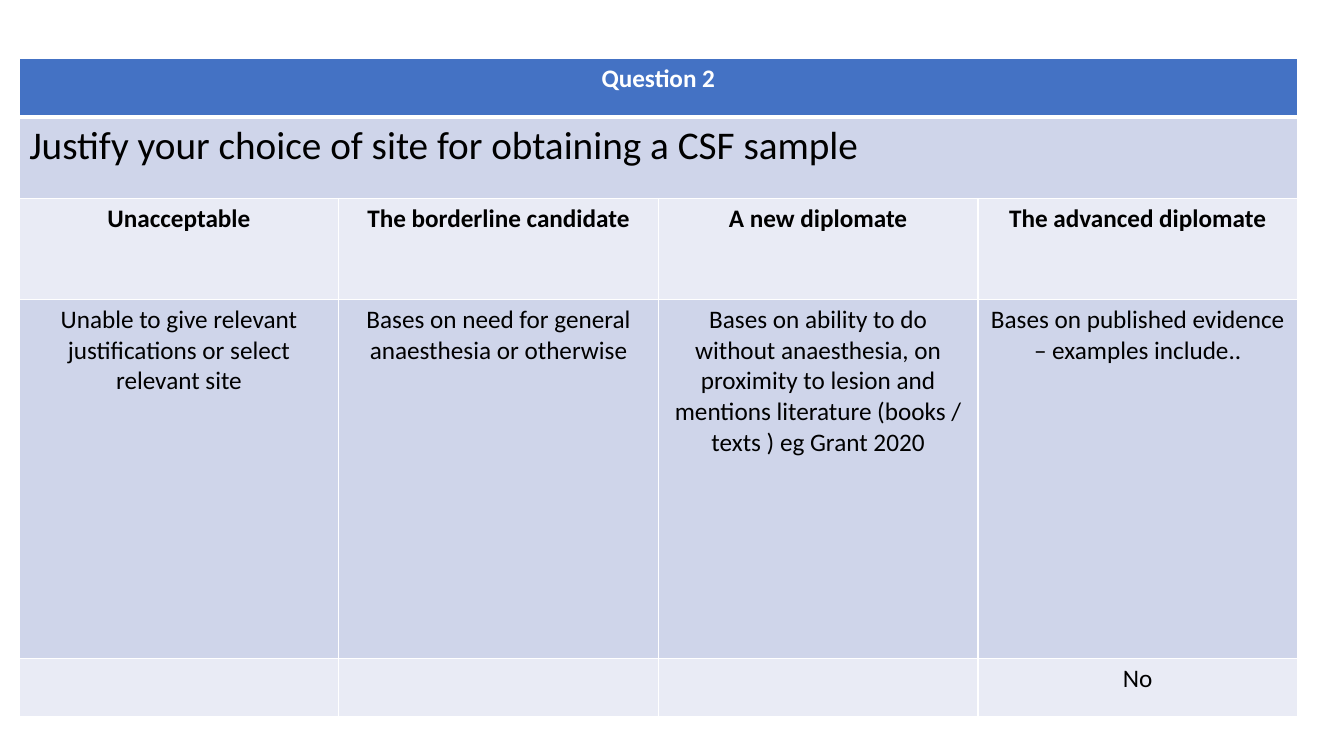
from lxml import etree
from pptx import Presentation
from pptx.dml.color import RGBColor
from pptx.enum.text import PP_ALIGN as Align
from pptx.oxml.ns import qn
from pptx.util import Inches, Pt

# Content: merged rows hold a single entry
ROWS = [
    ["Question 2"],
    ["Justify your choice of site for obtaining a CSF sample"],
    ["Unacceptable", "The borderline candidate", "A new diplomate",
     "The advanced diplomate"],
    ["Unable to give relevant justifications or select relevant site",
     "Bases on need for general anaesthesia or otherwise",
     "Bases on ability to do without anaesthesia, on proximity to lesion "
     "and mentions literature (books / texts ) eg Grant 2020",
     "Bases on published evidence – examples include.."],
    ["", "", "", "No"],
]
COLORS = {"header": "4472C4", "dark_band": "CFD5EA", "light_band": "E9EBF5",
          "white": "FFFFFF", "black": "000000"}
FONT = "Calibri"

# Row styles: height, fill, text colour, size, bold, alignment
STYLES = [
    (0.58, "header", "white", 18, True, Align.CENTER),
    (0.81, "dark_band", "black", 28, False, Align.LEFT),
    (1.00, "light_band", "black", 18, True, Align.CENTER),
    (3.56, "dark_band", "black", 18, False, Align.CENTER),
    (0.58, "light_band", "black", 18, False, Align.CENTER),
]
LEFT, TOP, COLUMN_WIDTH, COLUMN_COUNT = 0.19, 0.58, 3.17, 4


def set_borders(cell, top, bottom):
    properties = cell._tc.get_or_add_tcPr()
    for side, width in (("L", 1), ("R", 1), ("T", top), ("B", bottom)):
        line = etree.SubElement(properties, qn(f"a:ln{side}"), w=str(Pt(width)))
        fill = etree.SubElement(line, qn("a:solidFill"))
        etree.SubElement(fill, qn("a:srgbClr"), val=COLORS["white"])


def main():
    presentation = Presentation()
    presentation.slide_width = Inches(13.33)
    presentation.slide_height = Inches(7.5)
    slide = presentation.slides.add_slide(presentation.slide_layouts[6])

    # Table grid
    height = sum(style[0] for style in STYLES)
    table = slide.shapes.add_table(
        len(ROWS), COLUMN_COUNT, Inches(LEFT), Inches(TOP),
        Inches(COLUMN_WIDTH * COLUMN_COUNT), Inches(height)).table
    for column in table.columns:
        column.width = Inches(COLUMN_WIDTH)

    for index, (texts, style) in enumerate(zip(ROWS, STYLES)):
        row_height, fill, color, size, bold, alignment = style
        table.rows[index].height = Inches(row_height)

        # Borders and fills, with a heavier rule below the header
        for cell in table.rows[index].cells:
            set_borders(cell, 3 if index == 1 else 1, 3 if index == 0 else 1)
            cell.fill.solid()
            cell.fill.fore_color.rgb = RGBColor.from_string(COLORS[fill])
        if len(texts) == 1:
            table.cell(index, 0).merge(table.cell(index, COLUMN_COUNT - 1))

        # Cell text
        for column_index, text in enumerate(texts):
            if not text:
                continue
            paragraph = table.cell(index, column_index).text_frame.paragraphs[0]
            paragraph.alignment = alignment
            run = paragraph.add_run()
            run.text = text
            run.font.name = FONT
            run.font.size = Pt(size)
            run.font.bold = bold
            run.font.color.rgb = RGBColor.from_string(COLORS[color])

    presentation.save("out.pptx")


if __name__ == "__main__":
    main()
